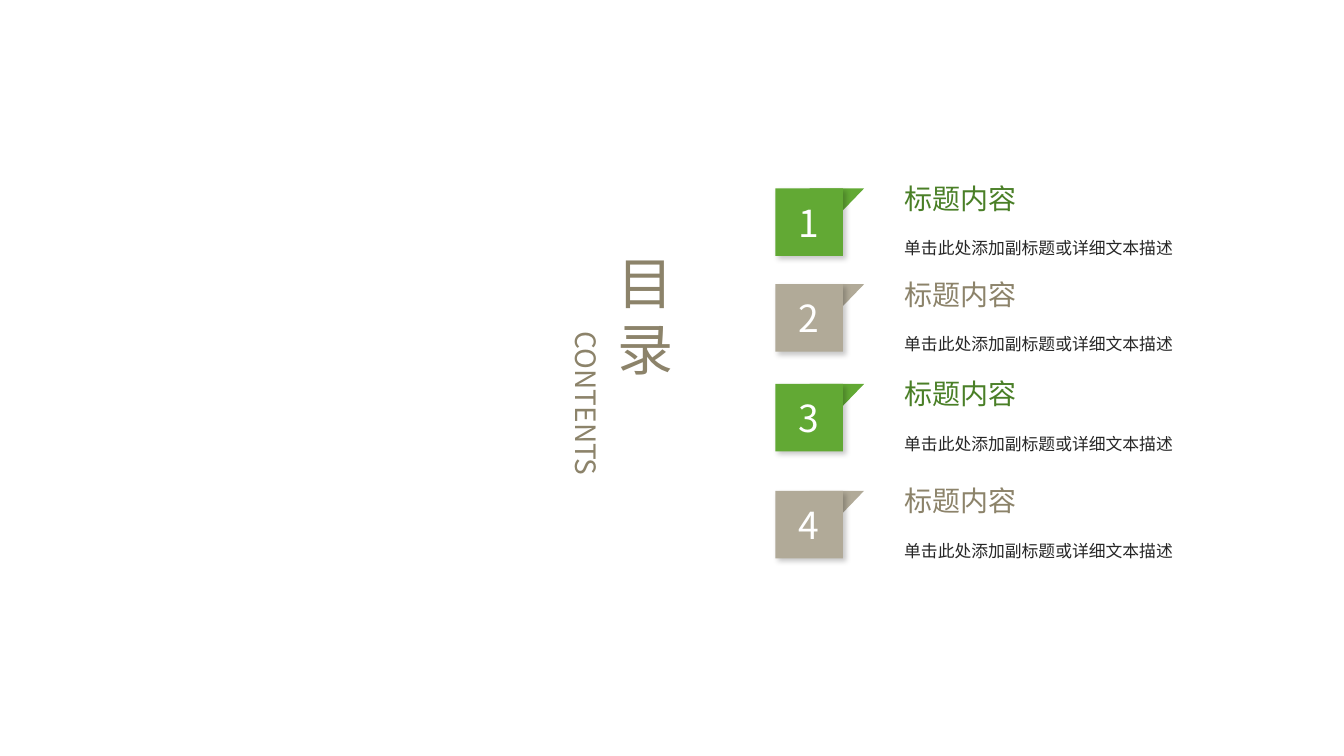
from lxml import etree
from pptx import Presentation
from pptx.dml.color import RGBColor
from pptx.enum.shapes import MSO_SHAPE
from pptx.enum.text import MSO_ANCHOR, MSO_AUTO_SIZE, PP_ALIGN
from pptx.oxml import parse_xml
from pptx.oxml.ns import nsdecls, qn
from pptx.util import Inches, Pt

RECT, TRIANGLE = MSO_SHAPE.RECTANGLE, MSO_SHAPE.RIGHT_TRIANGLE
TOP, MIDDLE = MSO_ANCHOR.TOP, MSO_ANCHOR.MIDDLE
LEFT, CENTER = PP_ALIGN.LEFT, PP_ALIGN.CENTER
FIXED, GROW = MSO_AUTO_SIZE.NONE, MSO_AUTO_SIZE.SHAPE_TO_FIT_TEXT

FONT = "Noto Sans CJK SC"
COLORS = {
    "green": "62A934", "dark_green": "4A7F27",
    "sand": "B1AA98", "dark_sand": "8C836A",
    "ink": "262626", "white": "FFFFFF",
}
SHADOW = (
    f'<a:effectLst {nsdecls("a")}><a:outerShdw blurRad="{Pt(4)}" dist="{Pt(3)}" '
    'dir="2700000" algn="tl" rotWithShape="0"><a:srgbClr val="000000">'
    '<a:alpha val="21000"/></a:srgbClr></a:outerShdw></a:effectLst>'
)


def write(sp, text, size, color, align=LEFT, anchor=MIDDLE, wrap=True,
          fit=FIXED, inset=(0.1, 0.05)):
    tf = sp.text_frame
    tf.word_wrap, tf.auto_size, tf.vertical_anchor = wrap, fit, anchor
    tf.margin_left = tf.margin_right = Inches(inset[0])
    tf.margin_top = tf.margin_bottom = Inches(inset[1])
    p = tf.paragraphs[0]
    p.alignment = align
    r = p.add_run()
    r.text = text
    r.font.size, r.font.name = Pt(size), FONT
    r.font.color.rgb = RGBColor.from_string(COLORS[color])
    etree.SubElement(r.font._element, qn("a:ea"), typeface=FONT)
    return p


def add_block(shapes, kind, box, color):
    sp = shapes.add_shape(kind, *map(Inches, box))
    sp.fill.solid()
    sp.fill.fore_color.rgb = RGBColor.from_string(COLORS[color])
    sp.line.fill.background()
    sp.shadow.inherit = False
    return sp


prs = Presentation()
prs.slide_width, prs.slide_height = Inches(13.33), Inches(7.5)
s = prs.slides.add_slide(prs.slide_layouts[5])

# Vertical heading
title = s.shapes.title
title.left, title.top = Inches(5.99), Inches(2.17)
title.width, title.height = Inches(0.87), Inches(1.93)
p = write(title, "目录", 40, "dark_sand", inset=(0.13, 0.07))
p.line_spacing = Pt(47)

contents = s.shapes.add_textbox(Inches(4.8), Inches(3.84), Inches(2.03), Inches(0.67))
contents.rotation = 90
write(contents, "CONTENTS", 20, "dark_sand", inset=(0.13, 0.07))

# Agenda rows: folded number badge, heading, description
BADGE_X, FOLD_X, TEXT_X = 7.69, 8.03, 8.87
ROW_TOPS = [1.87, 2.82, 3.81, 4.87]
ROW_COLORS = [("green", "dark_green"), ("sand", "dark_sand")]

for i, top in enumerate(ROW_TOPS):
    fill, heading_color = ROW_COLORS[i % 2]

    badge = s.shapes.add_group_shape()
    fold = add_block(badge.shapes, TRIANGLE, (FOLD_X, top, 0.54, 0.56), fill)
    fold._element.spPr.xfrm.set("flipV", "1")
    square = add_block(badge.shapes, RECT, (BADGE_X, top, 0.67, 0.67), fill)
    spPr = square._element.spPr
    spPr.replace(spPr.find(qn("a:effectLst")), parse_xml(SHADOW))
    write(square, str(i + 1), 26.6, "white", align=CENTER)

    heading = s.shapes.add_textbox(
        Inches(TEXT_X), Inches(top - 0.12), Inches(1.32), Inches(0.44))
    write(heading, "标题内容", 20, heading_color, anchor=TOP, wrap=False, fit=GROW)

    detail = s.shapes.add_textbox(
        Inches(TEXT_X), Inches(top + 0.44), Inches(4.26), Inches(0.3))
    write(detail, "单击此处添加副标题或详细文本描述", 12, "ink", fit=GROW)

prs.save("out.pptx")
